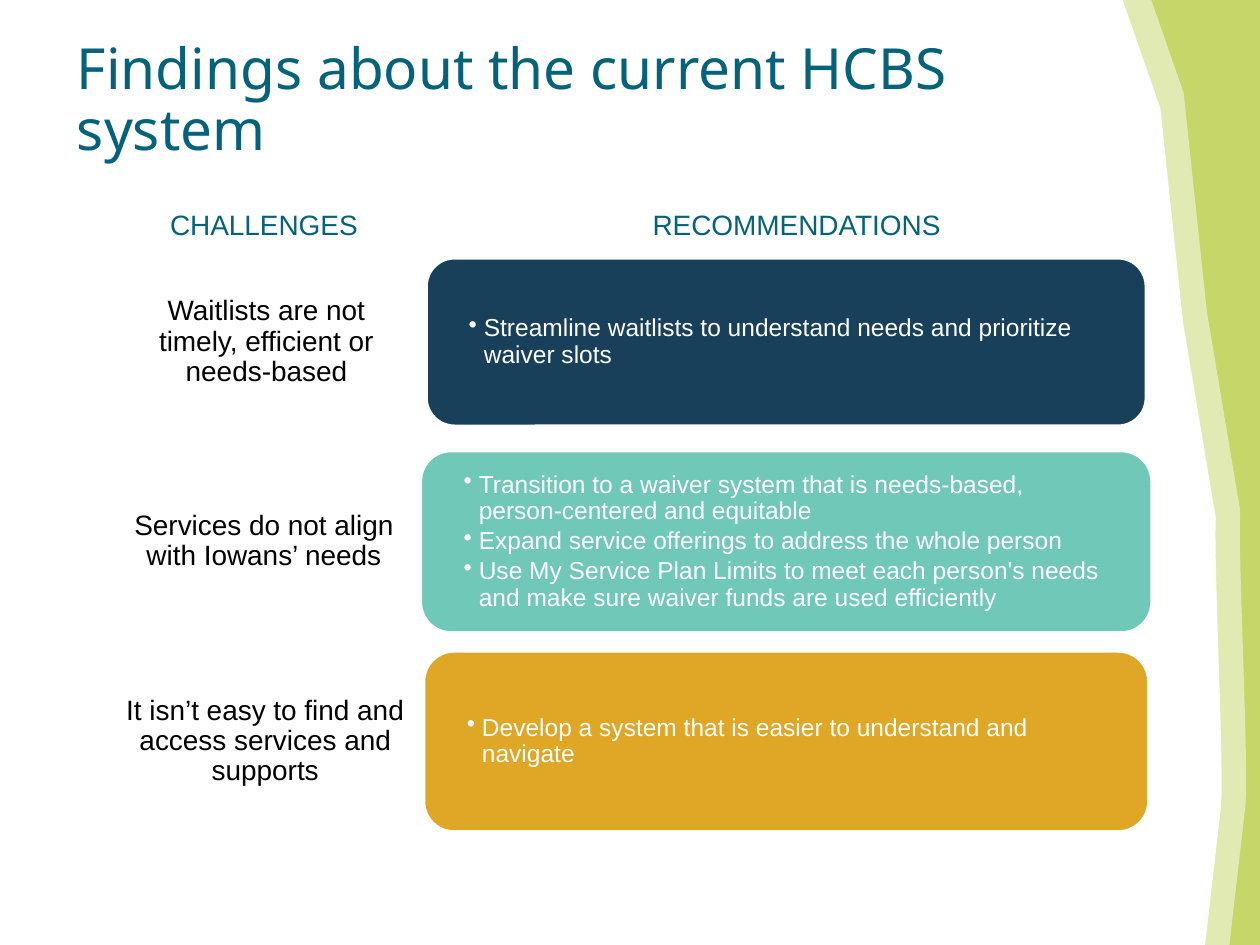
from dataclasses import dataclass

from lxml import etree
from pptx import Presentation
from pptx import util as u
from pptx.dml.color import RGBColor
from pptx.enum import shapes, text
from pptx.oxml import ns

WHITE = RGBColor(0xFF, 0xFF, 0xFF)
BLACK = RGBColor(0x00, 0x00, 0x00)
TEAL = RGBColor(0x04, 0x62, 0x7A)
NAVY = RGBColor(0x18, 0x40, 0x5B)
MINT = RGBColor(0x70, 0xC8, 0xB8)
AMBER = RGBColor(0xE0, 0xA6, 0x26)
LIME = RGBColor(0xC6, 0xD6, 0x68)
PALE_LIME = RGBColor(0xE1, 0xEA, 0xB3)

FIRST_CENTER = 2.715
ROW_PITCH = 1.585
CARD_CENTER = 6.24
CHALLENGE_LEFT = 0.85
CHALLENGE_HEIGHT = 1.51


@dataclass
class Finding:
    challenge: str
    challenge_width: float
    recommendations: list[str]
    card_width: float
    card_height: float
    color: RGBColor


FINDINGS = [
    Finding("Waitlists are not timely, efficient or needs-based", 2.53,
            ["Streamline waitlists to understand needs and prioritize waiver slots"],
            5.71, 1.33, NAVY),
    Finding("Services do not align with Iowans’ needs", 2.49,
            ["Transition to a waiver system that is needs-based, person-centered and equitable",
             "Expand service offerings to address the whole person",
             "Use My Service Plan Limits to meet each person's needs and make sure "
             "waiver funds are used efficiently"],
            5.8, 1.44, MINT),
    Finding("It isn’t easy to find and access services and supports", 2.51,
            ["Develop a system that is easier to understand and navigate"],
            5.75, 1.43, AMBER),
]


def write_text(box, lines: list[str], *, size: float, color: RGBColor, font: str = "Arial",
               align=text.PP_ALIGN.LEFT, anchor=text.MSO_ANCHOR.MIDDLE,
               margins: tuple[float, float] = (0.1, 0.05), bullet: bool = False,
               tabs: tuple[float, ...] = (), line_spacing: float = 0.9) -> None:
    frame = box.text_frame
    frame.word_wrap = True
    frame.auto_size = text.MSO_AUTO_SIZE.NONE
    frame.vertical_anchor = anchor
    frame.margin_left = frame.margin_right = u.Inches(margins[0])
    frame.margin_top = frame.margin_bottom = u.Inches(margins[1])
    for index, line in enumerate(lines):
        para = frame.paragraphs[0] if index == 0 else frame.add_paragraph()
        para.alignment = align
        para.line_spacing = line_spacing
        para.space_before = u.Pt(0)
        para.space_after = u.Pt(2 if bullet else 0)
        props = para._p.get_or_add_pPr()
        if bullet:
            props.set("marL", str(u.Inches(0.12)))
            props.set("indent", str(-u.Inches(0.12)))
            etree.SubElement(props, ns.qn("a:buChar")).set("char", "•")
        if tabs:
            tab_list = etree.SubElement(props, ns.qn("a:tabLst"))
            for stop in tabs:
                tab = etree.SubElement(tab_list, ns.qn("a:tab"))
                tab.set("pos", str(u.Inches(stop)))
                tab.set("algn", "l")
        span = para.add_run()
        span.text = line
        span.font.name = font
        span.font.size = u.Pt(size)
        span.font.color.rgb = color


def add_panel(page, left: float, center: float, width: float, height: float, color: RGBColor):
    panel = page.shapes.add_shape(
        shapes.MSO_SHAPE.ROUNDED_RECTANGLE, u.Inches(left), u.Inches(center - height / 2),
        u.Inches(width), u.Inches(height))
    panel.shadow.inherit = False
    panel.fill.solid()
    panel.fill.fore_color.rgb = color
    panel.line.color.rgb = WHITE
    panel.line.width = u.Pt(1.5)
    return panel


def bezier(points: list[tuple[float, float]], steps: int = 12) -> list[tuple[float, float]]:
    weights = (1, 3, 3, 1)
    return [tuple(sum(weights[k] * (1 - t) ** (3 - k) * t ** k * points[k][axis]
                      for k in range(4)) for axis in (0, 1))
            for t in (step / steps for step in range(steps + 1))]


def add_sheet(page, color: RGBColor, scale: float = 1, shift: float = 0) -> None:
    curve = bezier([(9.65, 4.11), (9.63, 4.45), (9.72, 6.13), (9.69, 6.41)])
    outline = [(0, -0.02), (8.91, 0), (9.21, 0.86), (9.39, 2.56), *curve, (9.56, 7.54), (0, 7.52)]
    points = [(u.Inches(x * scale), u.Inches(y * scale + shift)) for x, y in outline]
    builder = page.shapes.build_freeform(*points[0])
    builder.add_line_segments(points[1:], close=True)
    sheet = builder.convert_to_shape()
    sheet.shadow.inherit = False
    sheet.fill.solid()
    sheet.fill.fore_color.rgb = color
    sheet.line.fill.background()


def add_finding(page, finding: Finding, center: float) -> None:
    card = add_panel(page, CARD_CENTER - finding.card_width / 2, center,
                     finding.card_width, finding.card_height, finding.color)
    write_text(card, finding.recommendations, size=14, color=WHITE,
               margins=(0.27, 0.14), bullet=True)
    challenge = add_panel(page, CHALLENGE_LEFT, center, finding.challenge_width,
                          CHALLENGE_HEIGHT, WHITE)
    challenge.line.fill.background()
    write_text(challenge, [finding.challenge], size=16, color=BLACK,
               align=text.PP_ALIGN.CENTER, margins=(0.07, 0.03))


def main() -> None:
    deck = Presentation()
    deck.slide_width, deck.slide_height = u.Inches(10), u.Inches(7.5)
    page = deck.slides.add_slide(deck.slide_layouts[5])
    page.background.fill.solid()
    page.background.fill.fore_color.rgb = LIME
    add_sheet(page, PALE_LIME, scale=1.02, shift=-0.14)
    add_sheet(page, WHITE)

    title = page.shapes.title
    page.shapes._spTree.append(title._element)
    title.left, title.top = u.Inches(0.51), u.Inches(0.26)
    title.width, title.height = u.Inches(7.69), u.Inches(1.09)
    write_text(title, ["Findings about the current HCBS system"], size=32.4,
               color=TEAL, font="Noto Sans")

    for row, finding in enumerate(FINDINGS):
        add_finding(page, finding, FIRST_CENTER + row * ROW_PITCH)

    headings = page.shapes.add_textbox(u.Inches(0.86), u.Inches(1.61),
                                       u.Inches(8.14), u.Inches(0.35))
    write_text(headings, ["\tCHALLENGES\tRECOMMENDATIONS"], size=16, color=TEAL,
               anchor=text.MSO_ANCHOR.TOP, margins=(0.07, 0.04), tabs=(0.42, 4.25),
               line_spacing=1.0)
    deck.save("out.pptx")


if __name__ == "__main__":
    main()
